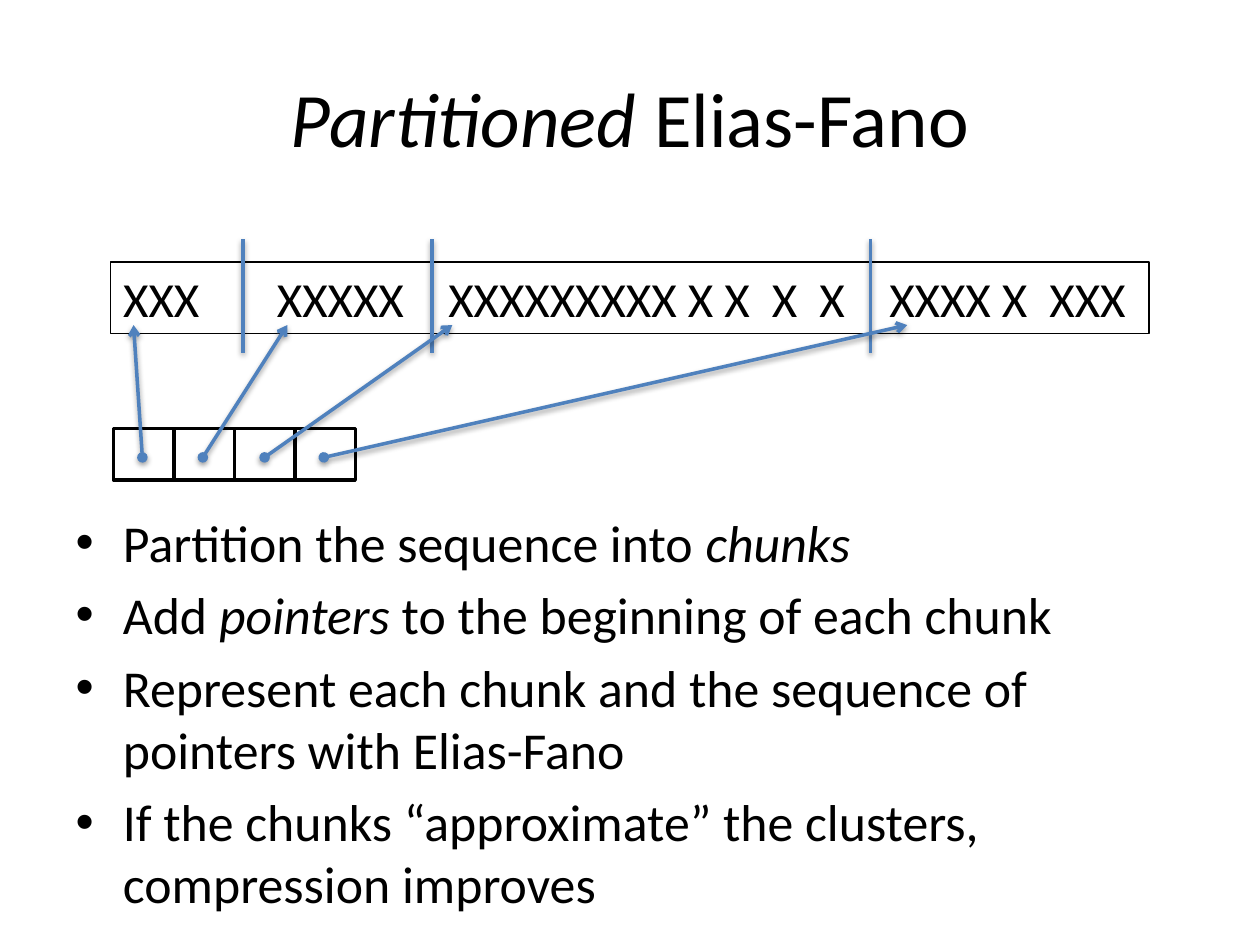
"""Build the Partitioned Elias-Fano slide: chunked sequence, pointers and bullets."""
from dataclasses import dataclass

from lxml import etree
from pptx import Presentation
from pptx import util as u
from pptx.dml import color
from pptx.enum import shapes, text
from pptx.oxml import ns

FONT = "Calibri"
BLACK, WHITE, BLUE = "000000", "FFFFFF", "4F81BD"


@dataclass
class Words:
    content: str
    italic: bool = False


@dataclass
class Pointer:
    start_x: float
    chunk_x: float


TITLE = [Words("Partitioned", True), Words(" Elias-Fano")]
BULLETS = [
    [Words("Partition the sequence into "), Words("chunks", True)],
    [Words("Add "), Words("pointers", True), Words(" to the beginning of each chunk")],
    [Words("Represent each chunk and the sequence of pointers with Elias-Fano")],
    [Words("If the chunks “approximate” the clusters, compression improves")],
]
CHUNKS = ["XXX", "XXXXX", "XXXXXXXXX X X  X  X", "XXXX X  XXX"]
CHUNK_TABS = [1.22, 2.58, 6.08]
BOUNDARIES = [1.93, 3.43, 6.91]
POINTERS = [Pointer(1.13, 1.06), Pointer(1.61, 2.28), Pointer(2.1, 3.59), Pointer(2.57, 7.2)]
CELL_LEFT, CELL_PITCH = 0.9, 0.48


def rgb(value: str) -> color.RGBColor:
    return color.RGBColor.from_string(value)


def place(shape, left: float, top: float, width: float, height: float) -> None:
    shape.left, shape.top = u.Inches(left), u.Inches(top)
    shape.width, shape.height = u.Inches(width), u.Inches(height)


def write(paragraph, words: list[Words], size: float) -> None:
    for part in words:
        run = paragraph.add_run()
        run.text = part.content
        run.font.name, run.font.size = FONT, u.Pt(size)
        run.font.italic = part.italic
        run.font.color.rgb = rgb(BLACK)


def add_box(slide, left: float, top: float, width: float, height: float,
            line_width: float, fill: str | None = None):
    box = slide.shapes.add_shape(shapes.MSO_SHAPE.RECTANGLE, u.Inches(left),
                                 u.Inches(top), u.Inches(width), u.Inches(height))
    box.shadow.inherit = False
    if fill:
        box.fill.solid()
        box.fill.fore_color.rgb = rgb(fill)
    else:
        box.fill.background()
    box.line.color.rgb = rgb(BLACK)
    box.line.width = u.Pt(line_width)
    return box


def add_line(slide, x1: float, y1: float, x2: float, y2: float):
    line = slide.shapes.add_connector(shapes.MSO_CONNECTOR.STRAIGHT, u.Inches(x1),
                                      u.Inches(y1), u.Inches(x2), u.Inches(y2))
    line.line.color.rgb = rgb(BLUE)
    line.line.width = u.Pt(2)
    return line


def add_pointer(slide, pointer: Pointer) -> None:
    arrow = add_line(slide, pointer.start_x, 3.63, pointer.chunk_x, 2.58)
    outline = arrow.line._get_or_add_ln()
    for end, kind in (("a:headEnd", "oval"), ("a:tailEnd", "arrow")):
        etree.SubElement(outline, ns.qn(end), type=kind)


def add_sequence(slide) -> None:
    sequence = add_box(slide, 0.88, 2.08, 8.24, 0.57, 0.75)
    frame = sequence.text_frame
    frame.word_wrap = True
    frame.margin_right = 0
    paragraph = frame.paragraphs[0]
    paragraph.alignment = text.PP_ALIGN.LEFT
    tabs = etree.SubElement(paragraph._p.get_or_add_pPr(), ns.qn("a:tabLst"))
    for stop in CHUNK_TABS:
        etree.SubElement(tabs, ns.qn("a:tab"), pos=str(u.Inches(stop)), algn="l")
    write(paragraph, [Words("\t".join(CHUNKS))], 28)


def main() -> None:
    deck = Presentation()
    deck.slide_width, deck.slide_height = u.Inches(10), u.Inches(7.5)
    slide = deck.slides.add_slide(deck.slide_layouts[1])

    title, body = slide.placeholders
    place(title, 0.5, 0.3, 9, 1.25)
    write(title.text_frame.paragraphs[0], TITLE, 44)

    place(body, 0.5, 4, 9, 3.09)
    frame = body.text_frame
    frame.auto_size = text.MSO_AUTO_SIZE.NONE
    for index, bullet in enumerate(BULLETS):
        paragraph = frame.add_paragraph() if index else frame.paragraphs[0]
        write(paragraph, bullet, 29.6)

    add_sequence(slide)
    for x in BOUNDARIES:
        add_line(slide, x, 1.9, x, 2.8)
    for index in range(len(POINTERS)):
        add_box(slide, CELL_LEFT + index * CELL_PITCH, 3.4, CELL_PITCH, 0.41, 2, WHITE)
    for pointer in POINTERS:
        add_pointer(slide, pointer)

    deck.save("out.pptx")


if __name__ == "__main__":
    main()
